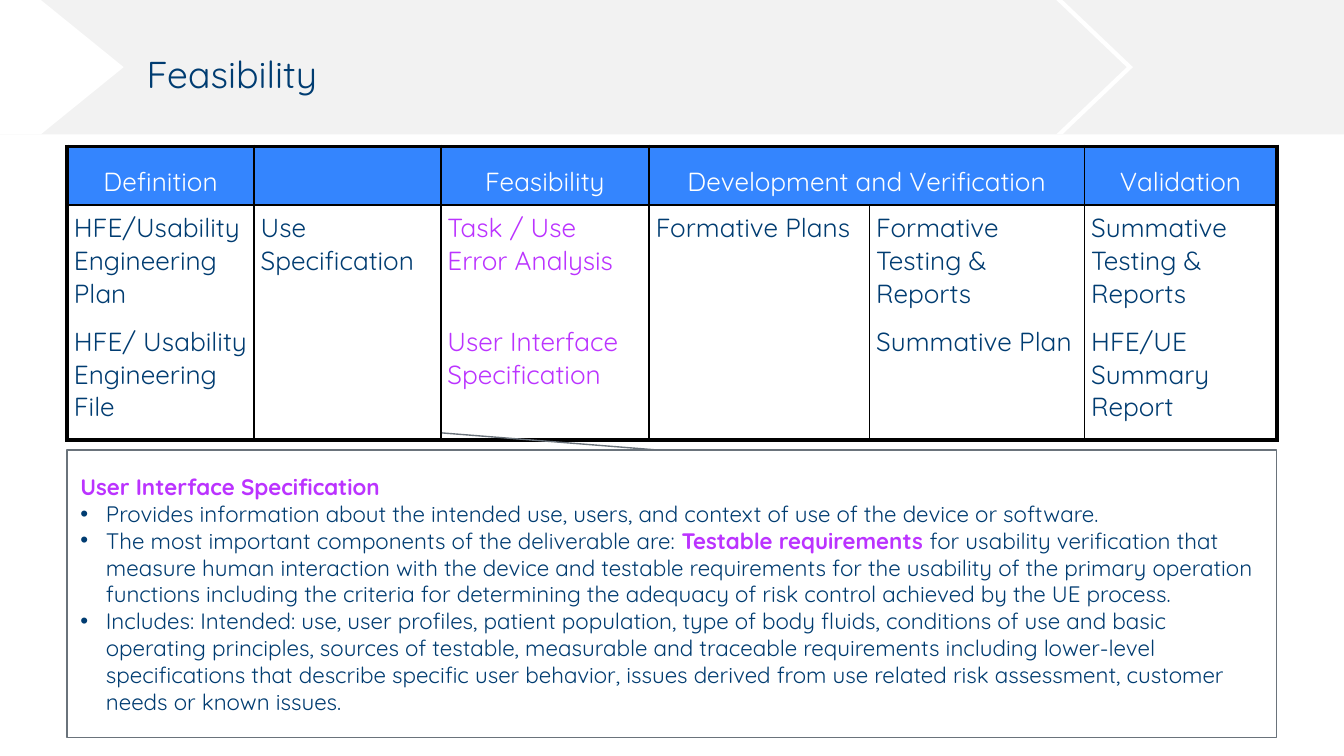
from lxml import etree
from pptx import Presentation, util as u
from pptx.dml.color import RGBColor
from pptx.enum import shapes, text
from pptx.oxml import ns

NAVY = RGBColor(0x00, 0x3C, 0x71)
PURPLE = RGBColor(0xBB, 0x33, 0xFF)
BLUE = RGBColor(0x34, 0x85, 0xFE)
GREY = RGBColor(0x6A, 0x73, 0x7B)
PALE = RGBColor(0xF2, 0xF2, 0xF2)
WHITE = RGBColor(0xFF, 0xFF, 0xFF)
BLACK = RGBColor(0x00, 0x00, 0x00)

UNIT = u.Inches(0.1)
COLS, ROWS = 100, 56.25
MARGIN, CONTENT = 5, 90
THICK, THIN = u.Pt(2.25), u.Pt(1)

STAGES = ["Definition", "", "Feasibility", "Development and Verification", "", "Validation"]
DELIVERABLES = [
    ["HFE/Usability Engineering Plan", "HFE/ Usability Engineering File"],
    ["Use Specification"],
    ["Task / Use Error Analysis", "User Interface Specification"],
    ["Formative Plans"],
    ["Formative Testing & Reports", "Summative Plan"],
    ["Summative Testing & Reports", "HFE/UE Summary Report"],
]
COL_WIDTHS = [13.9, 13.9, 15.5, 16.4, 16, 14.3]
ROW_HEIGHTS = [3, 17.5]
HIGHLIGHT = 2

HEADING = "User Interface Specification"
POINTS = [
    ["Provides information about the intended use, users, and context of use of "
     "the device or software."],
    ["The most important components of the deliverable are: ",
     ("Testable requirements ",),
     "for usability verification that measure human interaction with the device and "
     "testable requirements for the usability of the primary operation functions "
     "including the criteria for determining the adequacy of risk control achieved "
     "by the UE process."],
    ["Includes: Intended: use, user profiles, patient population, type of body fluids, "
     "conditions of use and basic operating principles, sources of testable, measurable "
     "and traceable requirements including lower-level specifications that describe "
     "specific user behavior, issues derived from use related risk assessment, customer "
     "needs or known issues."],
]


def grid(*values):
    return [round(v * UNIT) for v in values]


def write(tf, paragraphs, size=14, color=NAVY, align=text.PP_ALIGN.LEFT,
          spacing=None, after=0, bullets=False):
    for i, runs in enumerate(paragraphs):
        p = tf.paragraphs[0] if i == 0 else tf.add_paragraph()
        if bullets and i > 0:
            pPr = p._p.get_or_add_pPr()
            pPr.set("marL", str(u.Inches(0.19)))
            pPr.set("indent", str(-u.Inches(0.19)))
            etree.SubElement(pPr, ns.qn("a:buFont")).set("typeface", "Arial")
            etree.SubElement(pPr, ns.qn("a:buChar")).set("char", "•")
        p.alignment = align
        p.line_spacing = spacing
        p.space_after = u.Pt(after)
        for run in runs:
            strong = isinstance(run, tuple)
            r = p.add_run()
            r.text = run[0] if strong else run
            r.font.name = "Quicksand"
            r.font.size = u.Pt(size)
            r.font.bold = strong
            r.font.color.rgb = PURPLE if strong else color


class Deck:
    def __init__(self):
        self.prs = Presentation()
        self.prs.slide_width, self.prs.slide_height = grid(COLS, ROWS)
        self.s = self.prs.slides.add_slide(self.prs.slide_layouts[5])

    def shape(self, kind, box, fill, adjust=(), line=None):
        sp = self.s.shapes.add_shape(kind, *grid(*box))
        sp.shadow.inherit = False
        sp.fill.solid()
        sp.fill.fore_color.rgb = fill
        if line is None:
            sp.line.fill.background()
        else:
            sp.line.color.rgb = line
            sp.line.width = u.Pt(0.75)
        for i, value in enumerate(adjust):
            sp.adjustments[i] = value
        return sp

    def title(self, words, box):
        sp = self.s.shapes.title
        sp.left, sp.top, sp.width, sp.height = grid(*box)
        self.s.shapes.element.append(sp.element)
        tf = sp.text_frame
        tf.vertical_anchor = text.MSO_ANCHOR.MIDDLE
        write(tf, [[words]], size=20, spacing=0.9)

    def border(self, cell, sides):
        tcPr = cell._tc.get_or_add_tcPr()
        for side, width in sides.items():
            ln = etree.SubElement(tcPr, ns.qn("a:ln" + side), w=str(width))
            fill = etree.SubElement(ln, ns.qn("a:solidFill"))
            etree.SubElement(fill, ns.qn("a:srgbClr"), val=str(BLACK))

    def table(self, left, top):
        n, m = len(ROW_HEIGHTS), len(COL_WIDTHS)
        box = grid(left, top, CONTENT, sum(ROW_HEIGHTS))
        table = self.s.shapes.add_table(n, m, *box).table
        for column, width in zip(table.columns, COL_WIDTHS):
            column.width = grid(width)[0]
        for row, height in zip(table.rows, ROW_HEIGHTS):
            row.height = grid(height)[0]
        for i in range(n):
            for j in range(m):
                cell = table.cell(i, j)
                edges = {"L": j == 0, "R": j == m - 1, "T": i == 0, "B": i == n - 1}
                self.border(cell, {k: THICK if outer else THIN for k, outer in edges.items()})
                cell.fill.solid()
                cell.fill.fore_color.rgb = WHITE if i else BLUE
                cell.margin_left = cell.margin_right = u.Inches(0.05)
                cell.margin_top = cell.margin_bottom = u.Inches(0.05)
                if i:
                    marked = j == HIGHLIGHT
                    write(cell.text_frame, [[item] for item in DELIVERABLES[j]],
                          color=PURPLE if marked else NAVY, after=26 if marked else 8.4)
                elif STAGES[j]:
                    write(cell.text_frame, [[STAGES[j]]], color=WHITE,
                          align=text.PP_ALIGN.CENTER, spacing=u.Pt(24))
        table.cell(0, 3).merge(table.cell(0, 4))

    def callout(self, box, adjust):
        sp = self.shape(shapes.MSO_SHAPE.LINE_CALLOUT_1, box, WHITE, adjust, GREY)
        tf = sp.text_frame
        tf.word_wrap = True
        tf.vertical_anchor = text.MSO_ANCHOR.MIDDLE
        write(tf, [[(HEADING,)]] + POINTS, size=12, bullets=True)


def main():
    deck = Deck()
    deck.shape(shapes.MSO_SHAPE.RECTANGLE, (0, 0, COLS, 10), PALE)
    deck.shape(shapes.MSO_SHAPE.CHEVRON, (78.6, 0, 5.7, 10), WHITE, [0.92])
    deck.shape(shapes.MSO_SHAPE.PENTAGON, (0, 0, 9.2, 10), WHITE, [0.67])
    deck.title("Feasibility", (9.9, 2.9, 85.1, 5.5))
    deck.table(MARGIN, 10.9)
    deck.callout((MARGIN, 33.5, CONTENT, 21.4), [0, 0.49, -0.06, 0.31])
    deck.prs.save("out.pptx")


if __name__ == "__main__":
    main()
